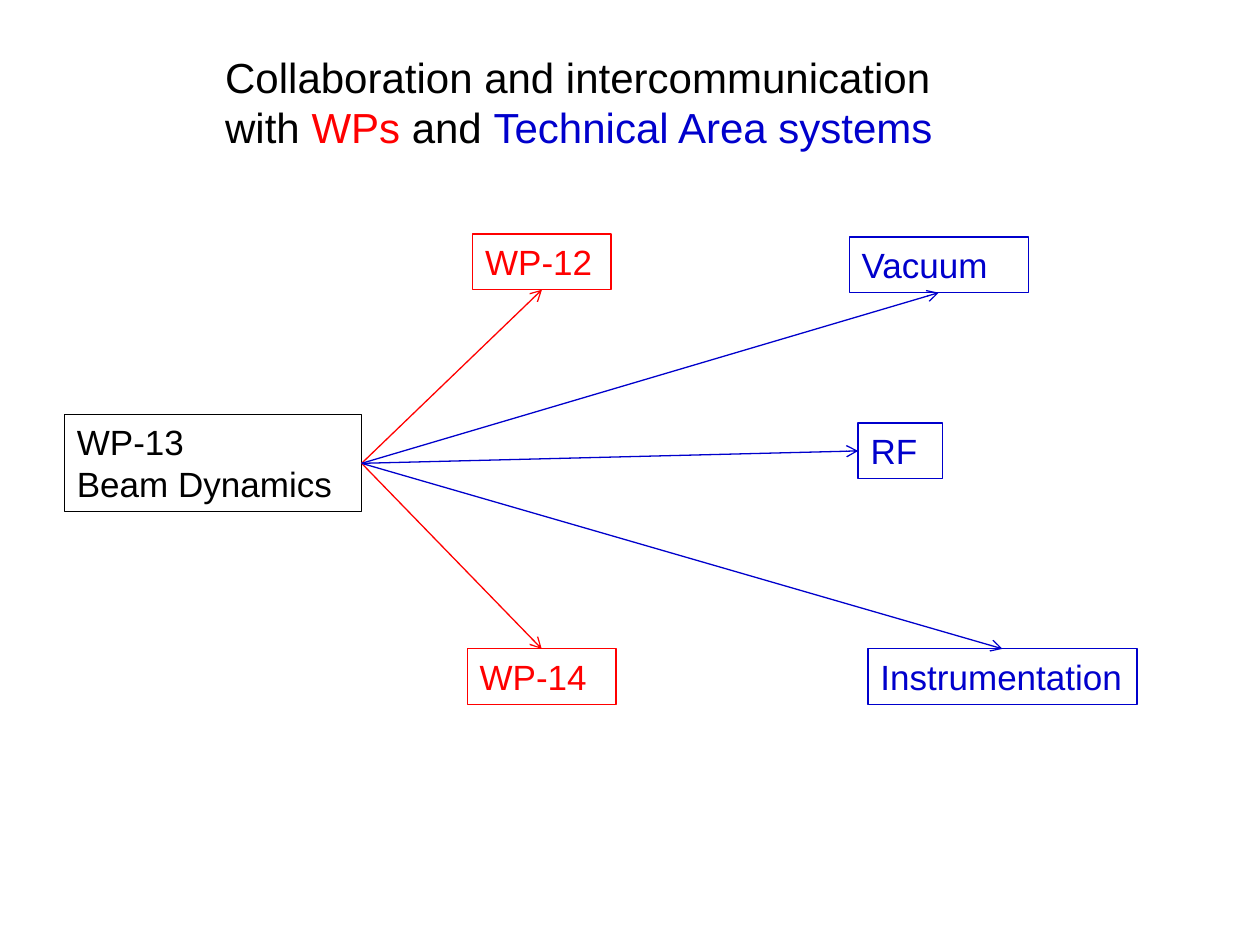
from lxml.etree import SubElement
from pptx import Presentation
from pptx.dml.color import RGBColor
from pptx.enum.shapes import MSO_CONNECTOR, MSO_SHAPE
from pptx.enum.text import MSO_ANCHOR, MSO_AUTO_SIZE, PP_ALIGN
from pptx.oxml.ns import qn
from pptx.util import Cm, Pt

BLACK, RED, BLUE = "000000", "FF0000", "0000CC"
TOP, LEFT, BOTTOM, RIGHT = range(4)  # connection sites of a rectangle

# Content: positions and sizes in centimetres
TITLE_AREA = (4.29, 0.91, 15.6, 2.31)
TITLE = [
    ("Collaboration and intercommunication with ", BLACK),
    ("WPs", RED),
    (" and ", BLACK),
    ("Technical Area systems", BLUE),
]
SOURCE_LINES, SOURCE_AREA = ["WP-13", "Beam Dynamics"], (1.3, 8.36, 5.99, 1.96)
BOX_HEIGHT = 1.12
TARGETS = [  # label, colour, left, top, width, site the arrow meets
    ("WP-12", RED, 9.53, 4.72, 2.79, BOTTOM),
    ("WP-14", RED, 9.42, 13.08, 3.0, TOP),
    ("Vacuum", BLUE, 17.12, 4.78, 3.61, BOTTOM),
    ("RF", BLUE, 17.3, 8.53, 1.7, LEFT),
    ("Instrumentation", BLUE, 17.5, 13.08, 5.42, TOP),
]
FRAME_FORMAT = {
    "word_wrap": True,
    "auto_size": MSO_AUTO_SIZE.SHAPE_TO_FIT_TEXT,
    "vertical_anchor": MSO_ANCHOR.TOP,
}


def color(value):
    return RGBColor.from_string(value)


def set_format(target, values):
    for name, value in values.items():
        setattr(target, name, value)


def add_run(paragraph, text, hue, size):
    run = paragraph.add_run()
    run.text = text
    set_format(run.font, {"name": "Arial", "size": Pt(size)})
    run.font.color.rgb = color(hue)


def set_line(line, hue):
    line.color.rgb = color(hue)
    line.width = Pt(0.75)


def add_box(slide, lines, hue, area):
    shape = slide.shapes.add_shape(MSO_SHAPE.RECTANGLE, *map(Cm, area))
    shape.shadow.inherit = False
    shape.fill.background()
    set_line(shape.line, hue)
    frame = shape.text_frame
    set_format(frame, FRAME_FORMAT)
    for index, text in enumerate(lines):
        paragraph = frame.add_paragraph() if index else frame.paragraphs[0]
        paragraph.alignment = PP_ALIGN.LEFT
        add_run(paragraph, text, hue, 20)
    return shape


def add_arrow(slide, source, target, site, hue):
    connector = slide.shapes.add_connector(MSO_CONNECTOR.STRAIGHT, 0, 0, 0, 0)
    connector.begin_connect(source, RIGHT)
    connector.end_connect(target, site)
    set_line(connector.line, hue)
    SubElement(connector.line._get_or_add_ln(), qn("a:tailEnd"), type="arrow")
    SubElement(connector._element.spPr, qn("a:effectLst"))


def main():
    presentation = Presentation()
    set_format(presentation, {"slide_width": Cm(25.4), "slide_height": Cm(19.05)})
    slide = presentation.slides.add_slide(presentation.slide_layouts[6])

    # Title
    frame = slide.shapes.add_textbox(*map(Cm, TITLE_AREA)).text_frame
    set_format(frame, FRAME_FORMAT)
    for text, hue in TITLE:
        add_run(frame.paragraphs[0], text, hue, 24)

    # Boxes
    source = add_box(slide, SOURCE_LINES, BLACK, SOURCE_AREA)
    boxes = [
        add_box(slide, [label], hue, (left, top, width, BOX_HEIGHT))
        for label, hue, left, top, width, _ in TARGETS
    ]

    # Arrows from the source to every target
    for box, (_, hue, *_, site) in zip(boxes, TARGETS):
        add_arrow(slide, source, box, site, hue)

    presentation.save("out.pptx")


if __name__ == "__main__":
    main()
